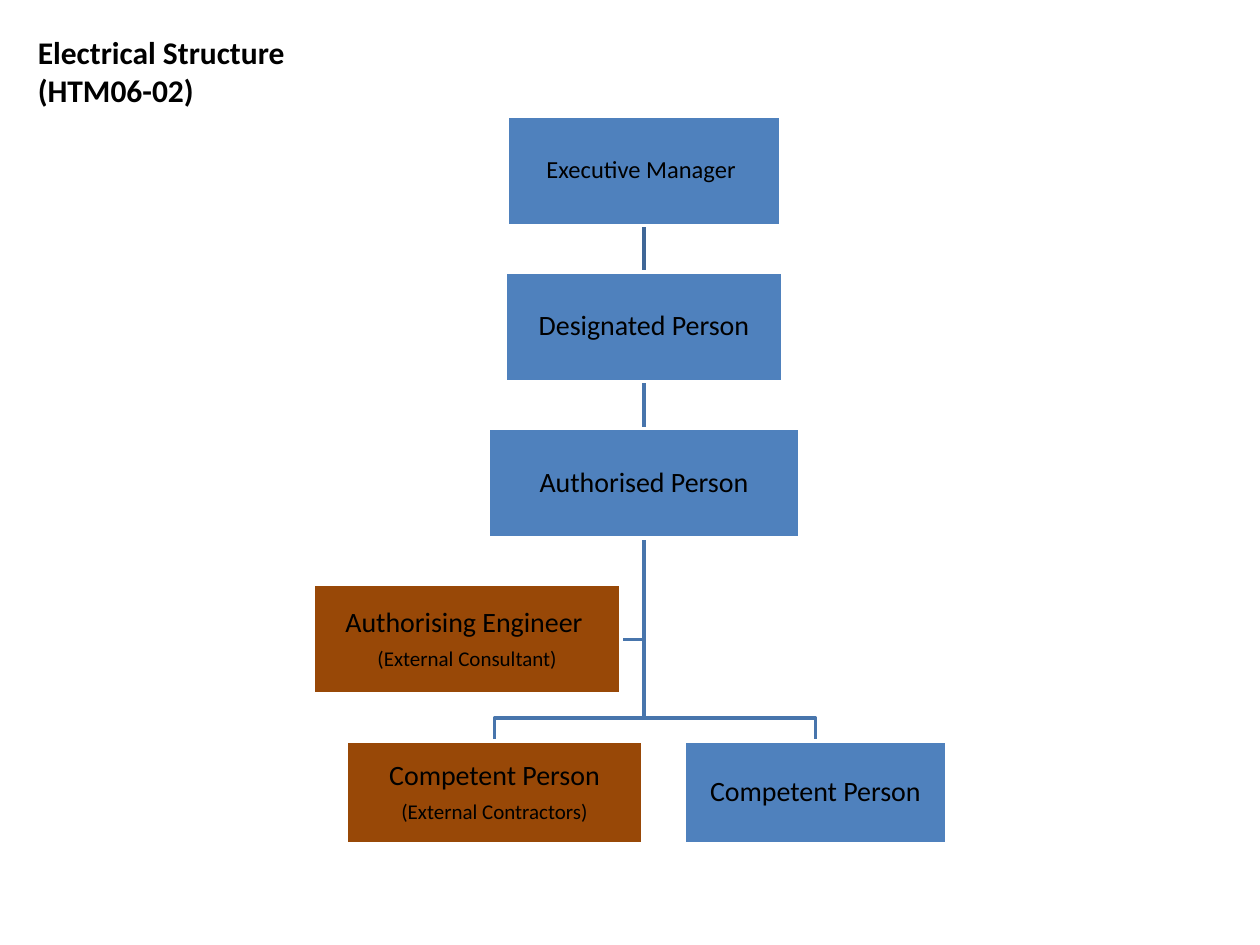
from pptx import Presentation
from pptx.dml.color import RGBColor
from pptx.enum import shapes, text
from pptx.util import Pt

BLUE, BROWN, LINE, DARK_LINE = "4F81BD", "984807", "4875AC", "3F6797"
TRUNK = 368       # x of the central line
TOP, STEP, HEIGHT = 66.2, 89.3, 62.6
LOW_HEIGHT = 59   # boxes of the last level
BRANCH = 410.4    # y where the trunk splits


def rgb(value):
    return RGBColor.from_string(value)


def add_text(tf, lines, align, bold=False, **spacing):
    """Write (wording, size) pairs as paragraphs."""
    for i, (wording, size) in enumerate(lines):
        p = tf.paragraphs[0] if i == 0 else tf.add_paragraph()
        p.alignment = align
        for name, value in spacing.items():
            setattr(p, name, value)
        if align == text.PP_ALIGN.CENTER:
            p.space_after = Pt(size * 0.35)
        r = p.add_run()
        r.text = wording
        font = {"name": "Calibri", "size": Pt(size), "bold": bold}
        for name, value in font.items():
            setattr(r.font, name, value)
        r.font.color.rgb = rgb("000000")


prs = Presentation()
prs.slide_width, prs.slide_height = Pt(720), Pt(540)
s = prs.slides.add_slide(prs.slide_layouts[5])

# Title
title = s.shapes.title
place = {"left": 14.4, "top": 15.1, "width": 360, "height": 51.1}
for name, value in place.items():
    setattr(title, name, Pt(value))
tf = title.text_frame
tf.word_wrap = True
tf.auto_size = text.MSO_AUTO_SIZE.NONE
tf.vertical_anchor = text.MSO_ANCHOR.TOP
add_text(tf, [("Electrical Structure", 18), ("(HTM06-02)", 18)],
         text.PP_ALIGN.LEFT, bold=True, space_before=Pt(0))

# Lines between the levels
level = [TOP + STEP * i for i in range(5)]
bottom = [y + HEIGHT for y in level]
start = (TRUNK, bottom[2])
engineer_y = level[3] + HEIGHT / 2
routes = [
    (LINE, [start, (TRUNK, engineer_y), (355, engineer_y)]),
    (LINE, [start, (TRUNK, BRANCH), (466, BRANCH), (466, level[4])]),
    (LINE, [start, (TRUNK, BRANCH), (282.6, BRANCH), (282.6, level[4])]),
    (LINE, [(TRUNK, bottom[1]), (TRUNK, level[2])]),
    (DARK_LINE, [(TRUNK, bottom[0]), (TRUNK, level[1])]),
]
for color, route in routes:
    points = [(Pt(x), Pt(y)) for x, y in route]
    if len(points) == 2:
        sp = s.shapes.add_connector(shapes.MSO_CONNECTOR.STRAIGHT, *points[0], *points[1])
        effects = sp._element.spPr.makeelement(
            "{http://schemas.openxmlformats.org/drawingml/2006/main}effectLst", {})
    else:
        builder = s.shapes.build_freeform(*points[0])
        builder.add_line_segments(points[1:], close=False)
        sp = builder.convert_to_shape()
        sp.fill.background()
        sp.shadow.inherit = False
        effects = None
    sp.line.color.rgb = rgb(color)
    sp.line.width = Pt(2)
    if effects is not None:
        sp._element.spPr.append(effects)

# Boxes: centre, level, width, height, fill, lines
boxes = [
    (TRUNK, 0, 156.2, HEIGHT, BLUE, [("Executive Manager ", 14)]),
    (TRUNK, 1, 159, HEIGHT, BLUE, [("Designated Person", 16)]),
    (TRUNK, 2, 178, HEIGHT, BLUE, [("Authorised Person", 16)]),
    (282.6, 4, 169.2, LOW_HEIGHT, BROWN,
     [("Competent Person", 16), ("(External Contractors)", 12)]),
    (466, 4, 150, LOW_HEIGHT, BLUE, [("Competent Person", 16)]),
    (267, 3, 175.7, HEIGHT, BROWN,
     [("Authorising Engineer ", 16), ("(External Consultant)", 12)]),
]
for centre, row, width, height, fill, lines in boxes:
    sp = s.shapes.add_shape(shapes.MSO_SHAPE.RECTANGLE, Pt(centre - width / 2),
                            Pt(level[row]), Pt(width), Pt(height))
    sp.shadow.inherit = False
    sp.fill.solid()
    sp.fill.fore_color.rgb = rgb(fill)
    sp.line.color.rgb = rgb("FFFFFF")
    sp.line.width = Pt(2)
    tf = sp.text_frame
    tf.word_wrap = True
    tf.vertical_anchor = text.MSO_ANCHOR.MIDDLE
    for side in ("left", "top", "right", "bottom"):
        setattr(tf, f"margin_{side}", Pt(0.8))
    add_text(tf, lines, text.PP_ALIGN.CENTER, line_spacing=0.9)

prs.save("out.pptx")
